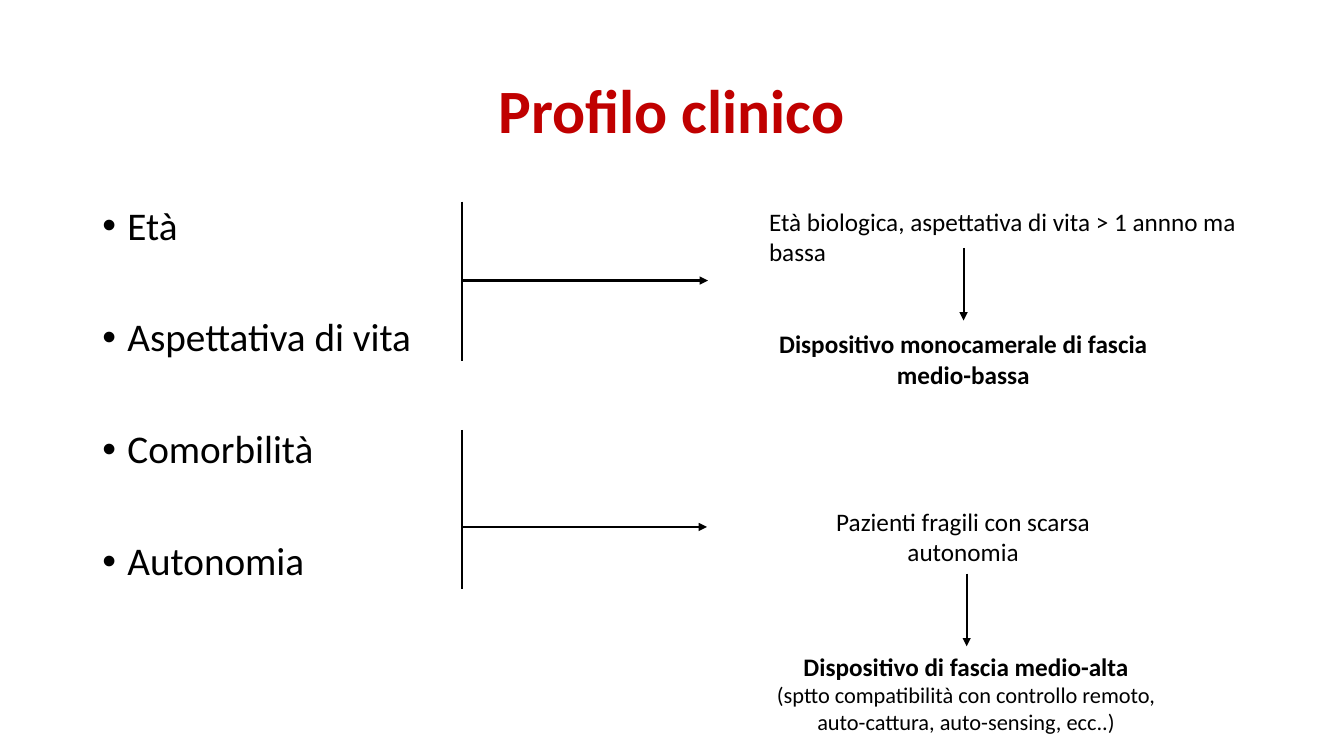
import lxml.etree
import pptx
import pptx.dml.color
import pptx.enum.shapes
import pptx.enum.text
import pptx.oxml.ns
import pptx.util

Pt = pptx.util.Pt
ALIGN = pptx.enum.text.PP_ALIGN
ANCHOR = pptx.enum.text.MSO_ANCHOR
qn = pptx.oxml.ns.qn

BLACK = pptx.dml.color.RGBColor(0x00, 0x00, 0x00)
RED = pptx.dml.color.RGBColor(0xC0, 0x00, 0x00)


class ClinicalSlide:
    font_name = "Calibri"
    line_width = 1.5

    def __init__(self, slide):
        self.slide = slide

    def frame(self, left, top, width, height, anchor=ANCHOR.TOP):
        box = self.slide.shapes.add_textbox(Pt(left), Pt(top), Pt(width), Pt(height))
        box.text_frame.word_wrap = True
        box.text_frame.vertical_anchor = anchor
        return box.text_frame

    def run(self, paragraph, text, size, bold=False, color=BLACK):
        run = paragraph.add_run()
        run.text = text
        run.font.name = self.font_name
        run.font.size = Pt(size)
        run.font.bold = bold
        run.font.color.rgb = color

    def title(self, text, area):
        paragraph = self.frame(*area, anchor=ANCHOR.MIDDLE).paragraphs[0]
        paragraph.alignment = ALIGN.CENTER
        paragraph.line_spacing = 0.9
        self.run(paragraph, text, 44, True, RED)

    def bullets(self, items, area, gap):
        frame = self.frame(*area)
        for index, item in enumerate(items):
            paragraph = frame.add_paragraph() if index else frame.paragraphs[0]
            paragraph.line_spacing = 0.9
            paragraph.space_before = Pt(gap if index else 0)
            self.run(paragraph, item, 28)
            properties = paragraph._p.get_or_add_pPr()
            properties.set("marL", str(Pt(18)))
            properties.set("indent", str(Pt(-18)))
            lxml.etree.SubElement(properties, qn("a:buFont")).set("typeface", "Arial")
            lxml.etree.SubElement(properties, qn("a:buChar")).set("char", "•")

    def note(self, lines, area, alignment=ALIGN.CENTER):
        frame = self.frame(*area)
        frame.auto_size = pptx.enum.text.MSO_AUTO_SIZE.SHAPE_TO_FIT_TEXT
        for index, (text, size, bold) in enumerate(lines):
            paragraph = frame.add_paragraph() if index else frame.paragraphs[0]
            paragraph.alignment = alignment
            self.run(paragraph, text, size, bold)

    def line(self, x1, y1, x2, y2, arrow=False):
        connector = self.slide.shapes.add_connector(
            pptx.enum.shapes.MSO_CONNECTOR.STRAIGHT, Pt(x1), Pt(y1), Pt(x2), Pt(y2))
        connector.line.color.rgb = BLACK
        connector.line.width = Pt(self.line_width)
        properties = connector._element.spPr
        if arrow:
            outline = properties.find(qn("a:ln"))
            lxml.etree.SubElement(outline, qn("a:tailEnd")).set("type", "triangle")
        lxml.etree.SubElement(properties, qn("a:effectLst"))

    def bracket(self, x, top, middle, bottom, tip):
        self.line(x, top, x, bottom)
        self.line(x, middle, tip, middle, arrow=True)


def main():
    presentation = pptx.Presentation()
    presentation.slide_width = Pt(960)
    presentation.slide_height = Pt(540)
    profile = ClinicalSlide(presentation.slides.add_slide(presentation.slide_layouts[6]))

    profile.title("Profilo clinico", (66, 28.75, 828, 104.4))
    factors = ["Età", "Aspettativa di vita", "Comorbilità", "Autonomia"]
    profile.bullets(factors, (66, 143.75, 828, 342.6), 49.7)

    for top, middle, bottom, tip in [(144, 200.4, 258, 505.7), (307, 376.4, 421, 505)]:
        profile.bracket(330, top, middle, bottom, tip)
    for x, top in [(688.3, 177), (690.5, 409.7)]:
        profile.line(x, top, x, top + 52, arrow=True)

    profile.note([("Età biologica, aspettativa di vita > 1 annno ma bassa", 18, False)],
                 (542.2, 144, 351.4, 50.9), ALIGN.LEFT)
    profile.note([("Dispositivo monocamerale di fascia medio-bassa", 18, True)],
                 (543, 231.3, 290.2, 50.9))
    profile.note([("Pazienti fragili con scarsa autonomia", 18, False)],
                 (579.6, 358, 216.7, 50.9))
    profile.note([("Dispositivo di fascia medio-alta", 18, True),
                  ("(sptto compatibilità con controllo remoto, "
                   "auto-cattura, auto-sensing, ecc..)", 16, False)],
                 (545, 461.7, 290.2, 67.9))

    presentation.save("out.pptx")


if __name__ == "__main__":
    main()
